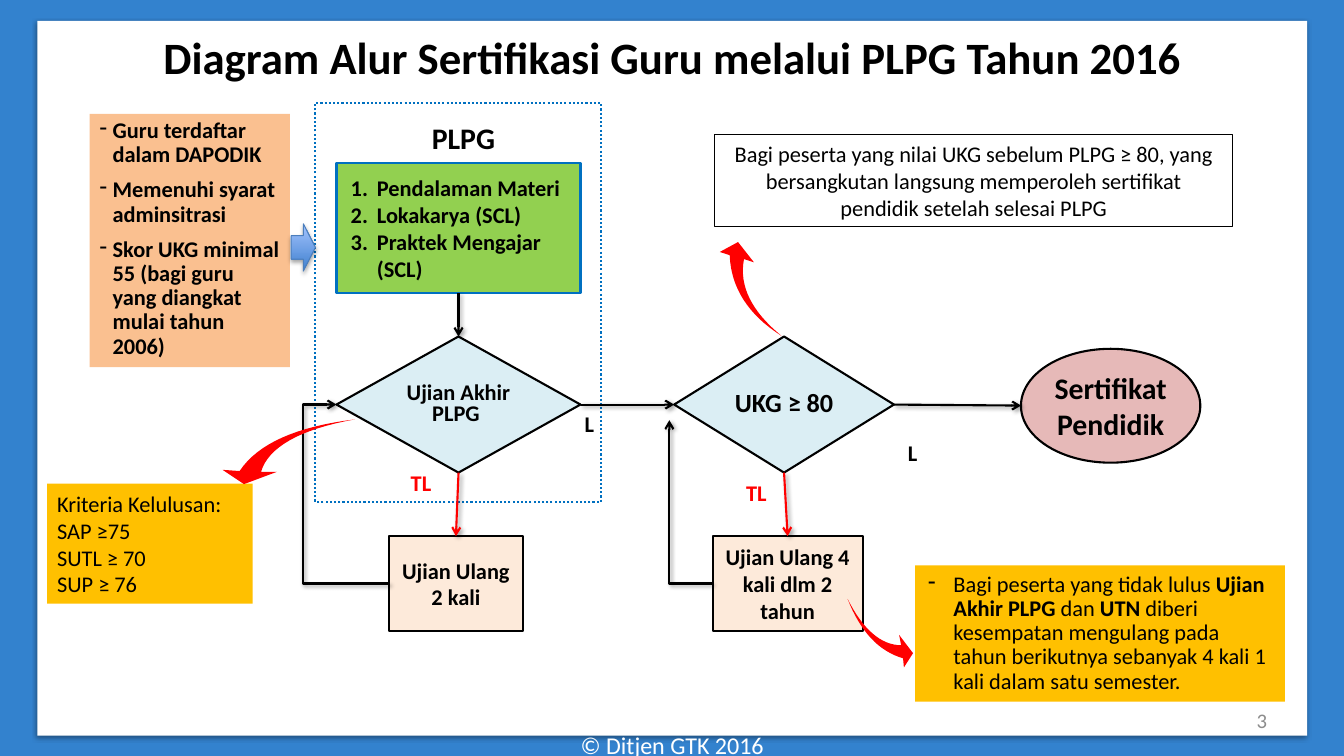
from lxml import etree
from pptx import Presentation
from pptx.dml.color import RGBColor
from pptx.enum.dml import MSO_LINE
from pptx.enum.shapes import MSO_CONNECTOR as CONN, MSO_SHAPE as SHAPE
from pptx.enum.text import MSO_ANCHOR as ANCHOR, PP_ALIGN as ALIGN
from pptx.oxml import parse_xml
from pptx.oxml.ns import nsdecls, qn
from pptx.util import Cm, Pt

BLACK = RGBColor(0, 0, 0)
WHITE = RGBColor(255, 255, 255)
RED = RGBColor(255, 0, 0)
GREY = RGBColor(0x8C, 0x8C, 0x8C)
BACKDROP = RGBColor(0x33, 0x82, 0xCE)
BLUE = RGBColor(0x00, 0x70, 0xC0)
GREEN = RGBColor(0x92, 0xD0, 0x50)
PALE_BLUE = RGBColor(0xDB, 0xEE, 0xF4)
PINK = RGBColor(0xE6, 0xB9, 0xB8)
ORANGE = RGBColor(0xFA, 0xC0, 0x90)
AMBER = RGBColor(0xFF, 0xC0, 0x00)
CREAM = RGBColor(0xFD, 0xEA, 0xDA)
ARROW_TOP = RGBColor(0xA4, 0xC4, 0xFF)
ARROW_BOTTOM = RGBColor(0x3F, 0x80, 0xCE)
ARROW_EDGE = RGBColor(0x4B, 0x7E, 0xBC)

NORMAL_INSET = (0.25, 0.13)
WIDE_INSET = (0.33, 0.17)


def write(sp, paras, size=16, color=BLACK, bold=False, align=ALIGN.LEFT,
          anchor=ANCHOR.MIDDLE, inset=NORMAL_INSET, spacing=None, after=0,
          bullet=None, indent=0, hang=0):
    """Fill a shape with paragraphs; each is a string or a list of (text, bold)."""
    tf = sp.text_frame
    tf.word_wrap = True
    tf.vertical_anchor = anchor
    tf.margin_left = tf.margin_right = Cm(inset[0])
    tf.margin_top = tf.margin_bottom = Cm(inset[1])
    for i, para in enumerate(paras):
        p = tf.add_paragraph() if i else tf.paragraphs[0]
        p.alignment = align
        p.space_after = Pt(after)
        if spacing:
            p.line_spacing = spacing
        if bullet:
            pPr = p._p.get_or_add_pPr()
            pPr.set("marL", str(Cm(indent)))
            pPr.set("indent", str(-Cm(hang)))
            if bullet == "1.":
                etree.SubElement(pPr, qn("a:buAutoNum"), type="arabicPeriod")
            else:
                etree.SubElement(pPr, qn("a:buChar"), char=bullet)
        for text, heavy in [(para, bold)] if isinstance(para, str) else para:
            r = p.add_run()
            r.text = text
            r.font.name = "Calibri"
            r.font.size = Pt(size)
            r.font.bold = heavy
            r.font.color.rgb = color


def label(s, box, text, **fmt):
    sp = s.shapes.add_textbox(*map(Cm, box))
    write(sp, [text], **{"align": ALIGN.CENTER, "inset": WIDE_INSET, **fmt})


def draw(s, kind, box, fill=None, line=None, width=1.5):
    sp = s.shapes.add_shape(kind, *map(Cm, box))
    sp.shadow.inherit = False
    if fill is None:
        sp.fill.background()
    else:
        sp.fill.solid()
        sp.fill.fore_color.rgb = fill
    if line is None:
        sp.line.fill.background()
    else:
        sp.line.color.rgb = line
        sp.line.width = Pt(width)
    return sp


def cast_shadow(sp, alpha, blur, dist, angle):
    spPr = sp._element.spPr
    for old in spPr.findall(qn("a:effectLst")):
        spPr.remove(old)
    spPr.append(parse_xml(
        f'<a:effectLst {nsdecls("a")}><a:outerShdw blurRad="{Pt(blur)}" '
        f'dist="{Pt(dist)}" dir="{angle * 60000}" rotWithShape="0">'
        f'<a:srgbClr val="000000"><a:alpha val="{alpha * 1000}"/></a:srgbClr>'
        '</a:outerShdw></a:effectLst>'))


def link(s, start, side, end, end_side=None, color=BLACK, kind=CONN.STRAIGHT):
    """Arrow from a side of start to a side of a shape, or to an (x, y) point."""
    target = (0, 0) if end_side is not None else map(Cm, end)
    cn = s.shapes.add_connector(kind, 0, 0, *target)
    cn.begin_connect(start, side)
    if end_side is not None:
        cn.end_connect(end, end_side)
    cn.line.color.rgb = color
    cn.line.width = Pt(1.5)
    etree.SubElement(cn.line._get_or_add_ln(), qn("a:tailEnd"), type="arrow")
    cast_shadow(cn, 40, 3, 2, 45)
    return cn


def bezier(p0, p1, p2, p3, steps=16):
    for i in range(1, steps + 1):
        t = i / steps
        k = ((1 - t) ** 3, 3 * t * (1 - t) ** 2, 3 * t * t * (1 - t), t ** 3)
        yield tuple(sum(f * q[a] for f, q in zip(k, (p0, p1, p2, p3))) for a in (0, 1))


def curved_arrow(s, tail, outer, head, inner):
    """Red arrow; outer, head and inner points are measured from the tail."""
    origin = (0, 0)
    points = [*bezier(origin, *outer), *head, *bezier(head[-1], *inner, origin)]
    fb = s.shapes.build_freeform(0, 0)
    fb.add_line_segments([(Cm(x), Cm(y)) for x, y in points], close=True)
    sp = fb.convert_to_shape(*map(Cm, tail))
    sp.shadow.inherit = False
    sp.fill.solid()
    sp.fill.fore_color.rgb = RED
    sp.line.fill.background()


def page_frame(s, box):
    x, y, w, h = box
    s.background.fill.solid()
    s.background.fill.fore_color.rgb = BACKDROP
    cast_shadow(draw(s, SHAPE.RECTANGLE, box, WHITE), 38, 3.1, 1.6, 90)
    label(s, (x + 10.64, y + h - 0.28, 10.72, 1.02), "© Ditjen GTK 2016",
          size=17.2, color=WHITE)
    label(s, (x + 23.34, y + h - 0.89, 7.9, 1.02), "3", size=14.8, color=GREY,
          align=ALIGN.RIGHT, inset=NORMAL_INSET)
    label(s, (x + 0.84, y + 0.08, 30.35, 1.63), size=32, bold=True,
          text="Diagram Alur Sertifikasi Guru melalui PLPG Tahun 2016",
          anchor=ANCHOR.TOP, inset=NORMAL_INSET)


def requirements(s, box):
    x, y, w, h = box
    write(draw(s, SHAPE.RECTANGLE, box, ORANGE),
          ["Guru terdaftar dalam DAPODIK", "Memenuhi syarat adminsitrasi",
           "Skor UKG minimal 55 (bagi guru yang diangkat mulai tahun 2006)"],
          bold=True, anchor=ANCHOR.TOP, spacing=0.9, after=8,
          bullet="-", indent=0.33, hang=0.33)
    sp = draw(s, SHAPE.RIGHT_ARROW, (x + w + 0.03, y + 2.77, 0.61, 1.19),
              line=ARROW_EDGE, width=0.75)
    sp.fill.gradient()
    sp.fill.gradient_angle = 90
    for stop, color in zip(sp.fill.gradient_stops, (ARROW_BOTTOM, ARROW_TOP)):
        stop.color.rgb = color
    cast_shadow(sp, 35, 3.1, 1.8, 90)


def training(s, box):
    x, y, w, h = box
    border = draw(s, SHAPE.RECTANGLE, box, line=BLUE)
    border.line.dash_style = MSO_LINE.ROUND_DOT
    label(s, (x + 1.52, y + 0.25, 4.42, 1.24), "PLPG", size=21.3, bold=True)
    course = draw(s, SHAPE.RECTANGLE, (x + 0.53, y + 1.52, 6.15, 3.28), GREEN, BLUE)
    write(course, ["Pendalaman Materi", "Lokakarya (SCL)", "Praktek Mengajar (SCL)"],
          bold=True, inset=(0, 0.13), bullet="1.", indent=1.02, hang=0.66)
    return course


def exam(s, box, question, size, retake, retake_at, passed_at, failed_at):
    """Decision with its retake box; retake_at is (left offset, width)."""
    x, y, w, h = box
    test = draw(s, SHAPE.DIAMOND, box, PALE_BLUE, BLACK)
    write(test, [question], size=size, bold=True, align=ALIGN.CENTER,
          inset=(0, 0), spacing=0.8)
    dx, width = retake_at
    again = draw(s, SHAPE.RECTANGLE, (x + dx, y + 5.03, width, 2.39), CREAM, BLACK)
    write(again, [retake], bold=True, align=ALIGN.CENTER)
    for text, color, (lx, ly) in (("L", BLACK, passed_at), ("TL", RED, failed_at)):
        label(s, (x + lx, y + ly, 1.5, 1.02), text, color=color, bold=True)
    link(s, test, 2, again, 0, RED)
    return test, again


def certificate(s, box):
    sp = draw(s, SHAPE.OVAL, box, PINK, BLACK)
    write(sp, ["Sertifikat Pendidik"], size=21.3, bold=True,
          align=ALIGN.CENTER, inset=(0, 0.13))


def notes_on_rules(s, direct, criteria, retry):
    write(draw(s, SHAPE.RECTANGLE, direct, line=BLACK, width=0.75),
          ["Bagi peserta yang nilai UKG sebelum PLPG ≥ 80, yang bersangkutan "
           "langsung memperoleh sertifikat pendidik setelah selesai PLPG"],
          align=ALIGN.CENTER, anchor=ANCHOR.TOP)
    write(draw(s, SHAPE.RECTANGLE, criteria, AMBER),
          ["Kriteria Kelulusan:", "SAP ≥75", "SUTL ≥ 70", "SUP ≥ 76"])
    write(draw(s, SHAPE.RECTANGLE, retry, AMBER),
          [[("Bagi peserta yang tidak lulus ", False), ("Ujian Akhir PLPG", True),
            (" dan ", False), ("UTN", True),
            (" diberi kesempatan mengulang pada tahun berikutnya sebanyak 4 kali "
             "1 kali dalam satu semester.", False)]],
          inset=WIDE_INSET, spacing=0.9, after=4, bullet="-", indent=0.64, hang=0.64)


def main():
    prs = Presentation()
    prs.slide_width, prs.slide_height = Cm(33.87), Cm(19.05)
    s = prs.slides.add_slide(prs.slide_layouts[6])
    page_frame(s, (0.94, 0.53, 32, 18.01))
    course = training(s, (7.95, 2.59, 7.19, 10.06))
    requirements(s, (2.26, 2.87, 5.05, 6.38))
    final, final_retake = exam(
        s, (8.48, 8.48, 6.15, 3.43), "Ujian Akhir PLPG ", 16, "Ujian Ulang 2 kali",
        (1.32, 3.38), (5.62, 1.68), (1.38, 3.18))
    ukg, ukg_retake = exam(
        s, (16.99, 8.48, 5.54, 3.43), "UKG ≥ 80", 18.7, "Ujian Ulang 4 kali dlm 2 tahun",
        (0.97, 3.78), (5.26, 2.42), (1.32, 3.43))
    certificate(s, (25.73, 8.79, 4.52, 2.87))
    notes_on_rules(s, (18.01, 3.4, 13.06, 2.31), (1.19, 12.19, 5.18, 3.02),
                   (23.06, 14.25, 9.32, 3.43))

    link(s, course, 2, final, 0)
    link(s, final, 3, ukg, 1)
    link(s, ukg, 3, (25.73, 10.22))
    back = link(s, final_retake, 1, final, 1, kind=CONN.ELBOW)
    geom = back._element.spPr.find(qn("a:prstGeom"))
    etree.SubElement(geom.find(qn("a:avLst")), qn("a:gd"), name="adj1", fmla="val 163800")
    back = link(s, ukg_retake, 1, (16.87, 10.59), kind=CONN.ELBOW)
    back._element.spPr.find(qn("a:prstGeom")).set("prst", "bentConnector2")

    curved_arrow(s, (21.36, 15.09), [(0.33, 0.84), (0.79, 1.32), (1.4, 1.5)],
                 [(1.42, 1.73), (1.65, 1.37), (1.3, 0.91), (1.35, 1.17)],
                 [(0.84, 1.17), (0.38, 0.76)])
    curved_arrow(s, (8.94, 10.57), [(-1.47, 0.18), (-2.44, 0.61), (-2.9, 1.3)],
                 [(-3.33, 1.27), (-2.79, 1.63), (-1.96, 1.32), (-2.36, 1.32)],
                 [(-2.18, 0.71), (-1.4, 0.25)])
    curved_arrow(s, (19.69, 8.46), [(-0.84, -0.53), (-1.27, -1.22), (-1.3, -2.03)],
                 [(-1.55, -2.11), (-1.09, -2.36), (-0.69, -1.85), (-0.94, -1.93)],
                 [(-1.07, -1.24), (-0.74, -0.61)])
    prs.save("out.pptx")


if __name__ == "__main__":
    main()
